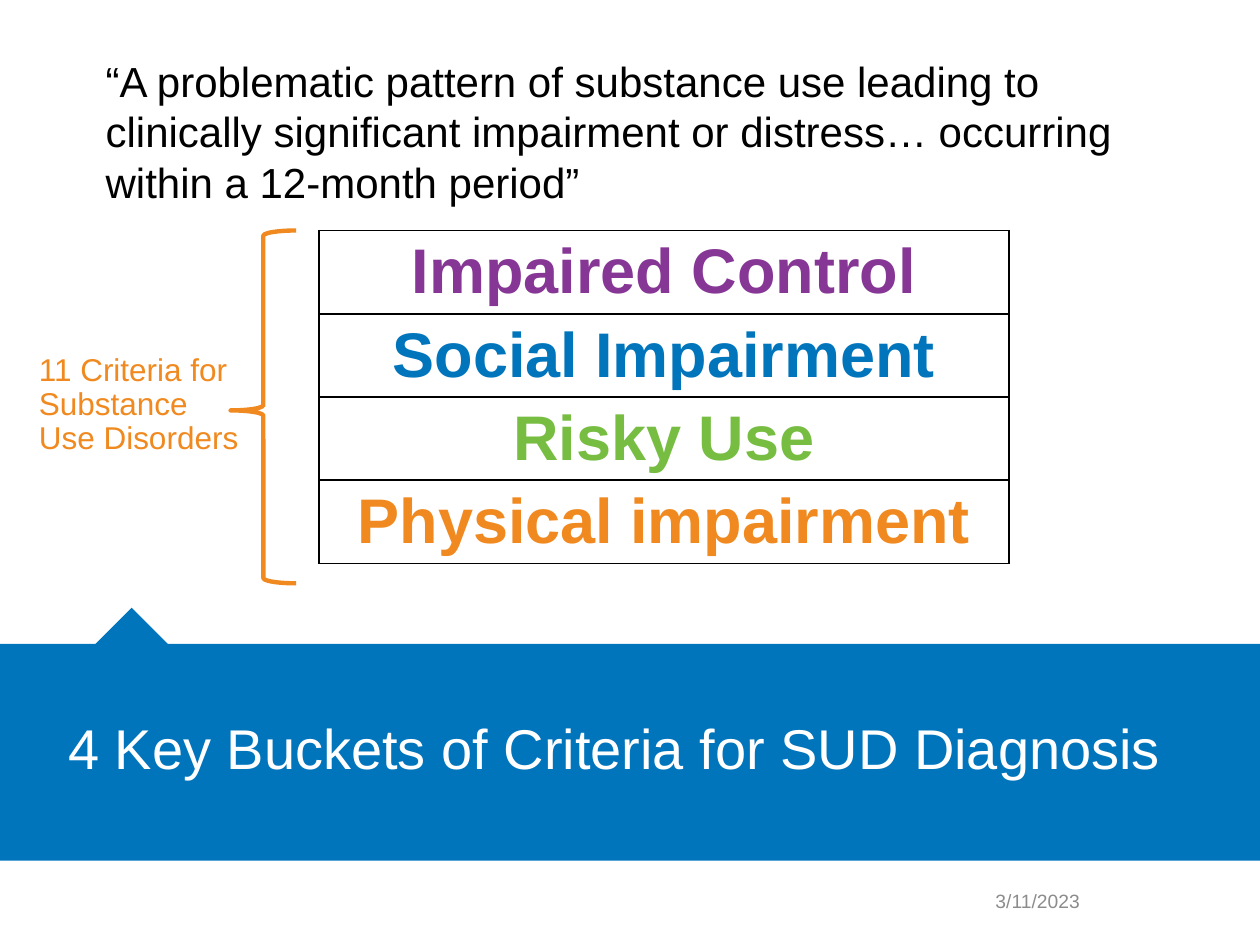
from lxml.etree import SubElement
from pptx import Presentation
from pptx.dml.color import RGBColor
from pptx.enum.shapes import MSO_SHAPE
from pptx.enum.text import MSO_ANCHOR, MSO_AUTO_SIZE, PP_ALIGN
from pptx.oxml.ns import qn
from pptx.util import Inches, Pt

COLORS = {
    "blue": "0075BC",
    "purple": "863694",
    "green": "77BD42",
    "orange": "F08A20",
    "black": "000000",
    "white": "FFFFFF",
    "gray": "8C8C8C",
}

BUCKETS = [
    ("Impaired Control", "purple"),
    ("Social Impairment", "blue"),
    ("Risky Use", "green"),
    ("Physical impairment", "orange"),
]


def rgb(color):
    return RGBColor.from_string(COLORS[color])


def write_text(frame, text, size, color, align=PP_ALIGN.LEFT, bold=False, line_spacing=1.0):
    frame.text = text
    paragraph = frame.paragraphs[0]
    paragraph.alignment = align
    paragraph.line_spacing = line_spacing
    paragraph.space_before = Pt(0)
    font = paragraph.runs[0].font
    font.name = "Arial"
    font.size = Pt(size)
    font.bold = bold
    font.color.rgb = rgb(color)


def add_label(slide, box, text, size, color, anchor=MSO_ANCHOR.TOP, **style):
    frame = slide.shapes.add_textbox(*map(Inches, box)).text_frame
    frame.word_wrap = True
    frame.vertical_anchor = anchor
    write_text(frame, text, size, color, **style)


def add_blue_block(slide, box, rotation=0):
    block = slide.shapes.add_shape(MSO_SHAPE.RECTANGLE, *map(Inches, box))
    block.shadow.inherit = False
    block.rotation = rotation
    block.fill.solid()
    block.fill.fore_color.rgb = rgb("blue")
    block.line.fill.background()
    return block


def add_title_band(slide, text):
    """Draw the blue band with its pointer, behind the title placeholder."""
    title = slide.shapes.title
    band = add_blue_block(slide, (0, 5.11, 10, 1.72))
    pointer = add_blue_block(slide, (0.81, 4.92, 0.47, 0.47), rotation=315)
    for block in (band, pointer):
        title.element.addprevious(block.element)

    title.left, title.top, title.width, title.height = map(Inches, (0.44, 5.31, 9.14, 1.31))
    frame = title.text_frame
    frame.auto_size = MSO_AUTO_SIZE.NONE
    frame.vertical_anchor = MSO_ANCHOR.MIDDLE
    write_text(frame, text, 32, "white", line_spacing=0.9)


def set_cell_borders(cell, color, width):
    properties = cell._tc.get_or_add_tcPr()
    for side in ("a:lnL", "a:lnR", "a:lnT", "a:lnB"):
        line = SubElement(properties, qn(side), w=str(Pt(width)))
        fill = SubElement(line, qn("a:solidFill"))
        SubElement(fill, qn("a:srgbClr"), val=COLORS[color])


def add_bucket_table(slide):
    row_height = Inches(0.66)
    table = slide.shapes.add_table(
        len(BUCKETS), 1, Inches(2.53), Inches(1.83), Inches(5.48), row_height * len(BUCKETS)
    ).table
    table.first_row = False
    table.horz_banding = False
    for row, (bucket, color) in zip(table.rows, BUCKETS):
        row.height = row_height
        cell = row.cells[0]
        set_cell_borders(cell, "black", 1)
        cell.fill.background()
        write_text(cell.text_frame, bucket, 36, color, align=PP_ALIGN.CENTER, bold=True)


def add_criteria_brace(slide):
    brace = slide.shapes.add_shape(
        MSO_SHAPE.LEFT_BRACE, Inches(1.83), Inches(1.83), Inches(0.52), Inches(2.8)
    )
    brace.shadow.inherit = False
    brace.adjustments[0] = 0.08
    brace.adjustments[1] = 0.51
    brace.fill.background()
    brace.line.color.rgb = rgb("orange")
    brace.line.width = Pt(2.5)


def main():
    presentation = Presentation()
    presentation.slide_width = Inches(10)
    presentation.slide_height = Inches(7.5)
    title_only = presentation.slide_layouts[5]
    slide = presentation.slides.add_slide(title_only)

    add_title_band(slide, "4 Key Buckets of Criteria for SUD Diagnosis")
    add_bucket_table(slide)
    add_label(slide, (7.34, 6.95, 1.33, 0.4), "3/11/2023", 11, "gray",
              anchor=MSO_ANCHOR.MIDDLE, align=PP_ALIGN.RIGHT)
    add_label(slide, (0.74, 0.39, 8.67, 1.31),
              "“A problematic pattern of substance use leading to clinically significant "
              "impairment or distress… occurring within a 12-month period”", 24, "black")
    add_criteria_brace(slide)
    add_label(slide, (0.21, 2.76, 1.88, 0.95), "11 Criteria for Substance Use Disorders",
              18, "orange", line_spacing=0.9)

    presentation.save("out.pptx")


if __name__ == "__main__":
    main()
